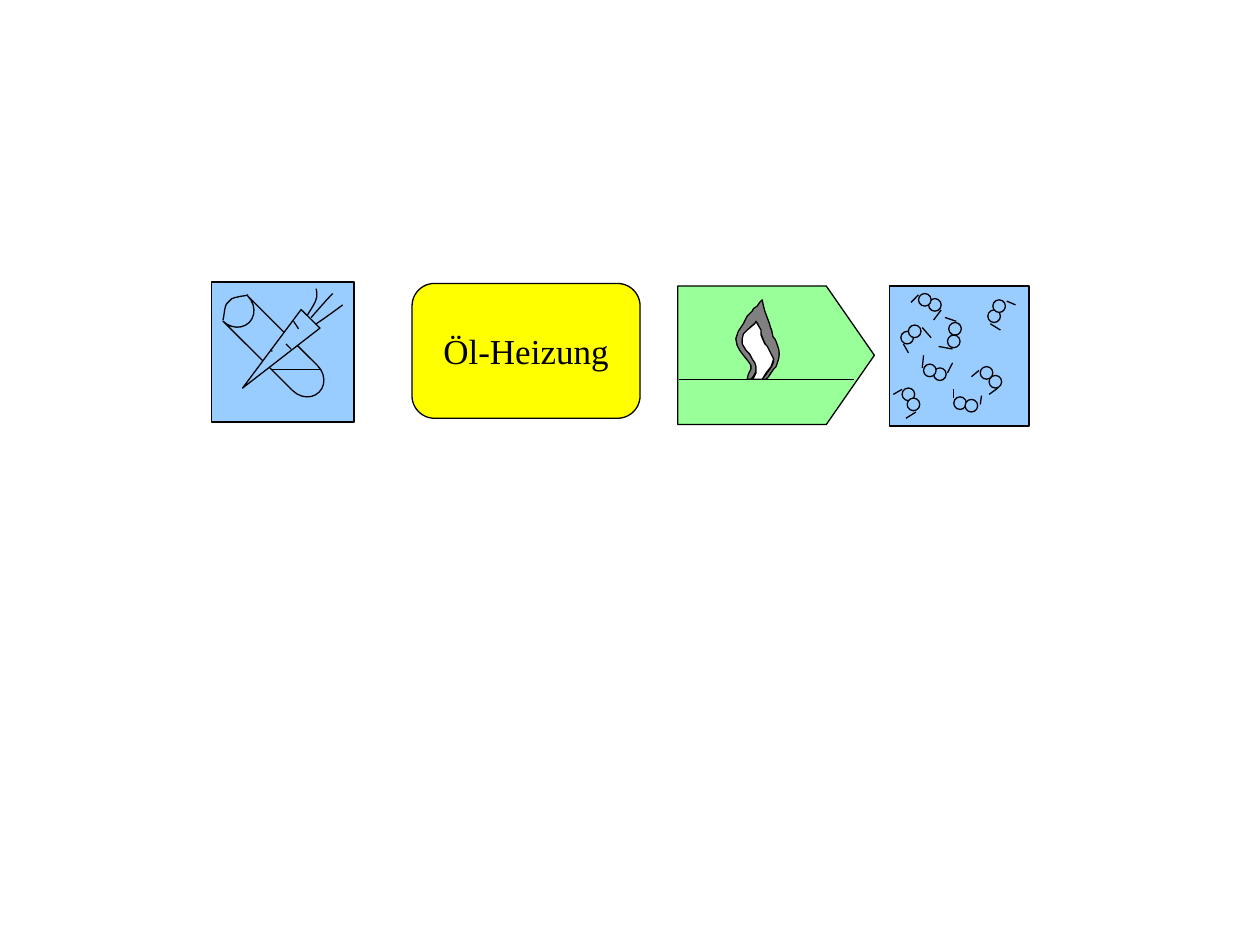
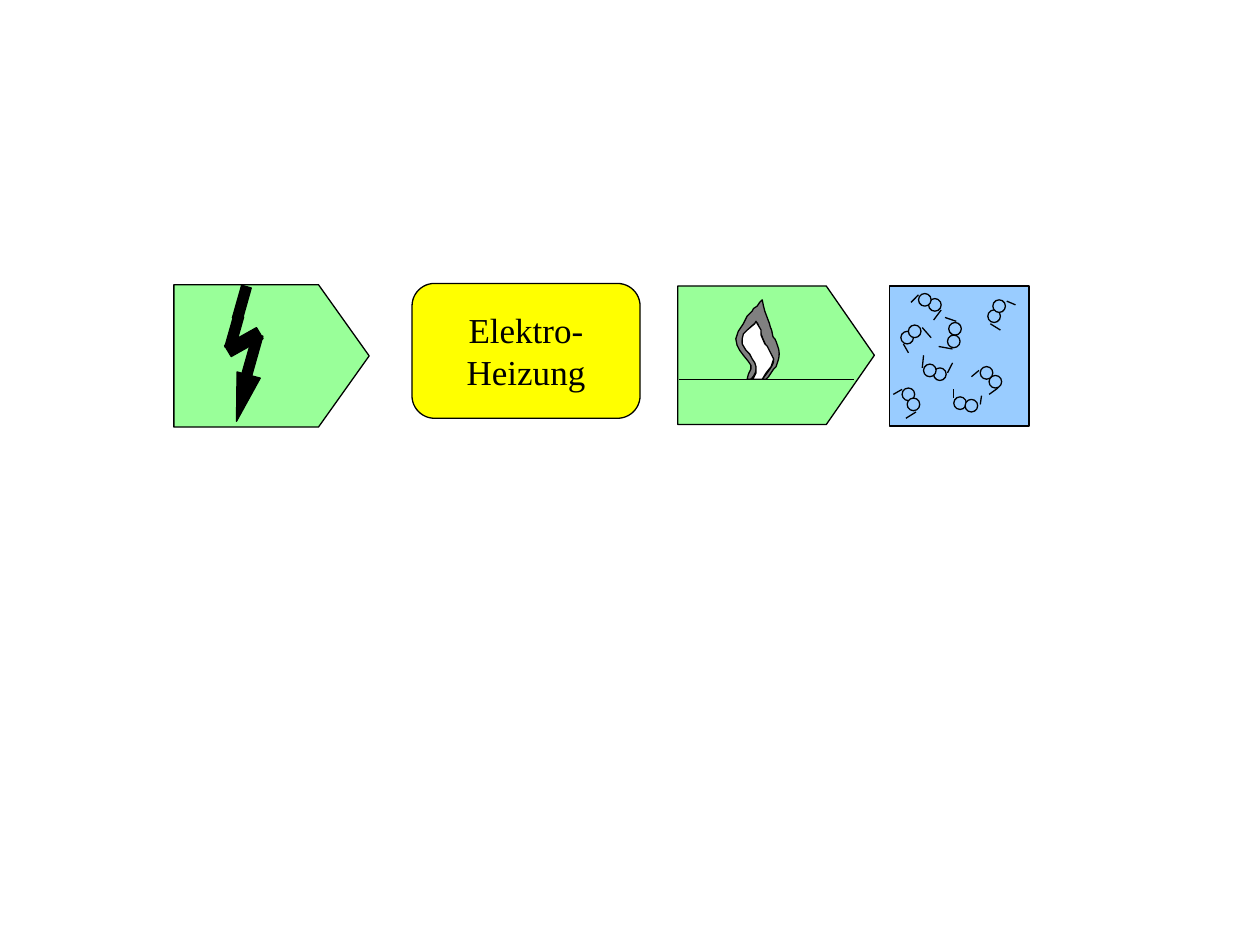
from lxml import etree
from pptx import Presentation
from pptx.dml.color import RGBColor
from pptx.enum.shapes import MSO_CONNECTOR, MSO_SHAPE
from pptx.enum.text import MSO_ANCHOR, PP_ALIGN
from pptx.oxml.ns import qn
from pptx.util import Inches, Pt

BLACK = RGBColor(0x00, 0x00, 0x00)
WHITE = RGBColor(0xFF, 0xFF, 0xFF)
GREY = RGBColor(0x80, 0x80, 0x80)
BLUE = RGBColor(0x99, 0xCC, 0xFF)
GREEN = RGBColor(0x99, 0xFF, 0x99)
YELLOW = RGBColor(0xFF, 0xFF, 0x00)

THIN, FRAME = 0.75, 1
CURVE_STEPS = 8
LABEL_FONT = {"name": "Times New Roman", "size": Pt(20)}
LABEL_FRAME = {"word_wrap": False, "vertical_anchor": MSO_ANCHOR.MIDDLE}

CONVERTER_AT = (3.27, 2.25, 1.81, 1.07)

FUEL_FRAME = (1.68, 2.24, 1.13, 1.11)
LOG_AT, LOG_TURN = (1.73, 2.64, 0.94, 0.28), 224.9
LOG_END = [
    (1.97, 2.34), (1.95, 2.35, 1.9, 2.35, 1.88, 2.36),
    (1.86, 2.36, 1.85, 2.37, 1.84, 2.37), (1.8, 2.41),
    (1.78, 2.44, 1.78, 2.51, 1.77, 2.54),
]
CARROT_AT, CARROT_TURN = (2.09, 2.42, 0.21, 0.77), 224.5
CARROT_LEAVES = [
    [(2.44, 2.5), (2.47, 2.45, 2.5, 2.41, 2.51, 2.37), (2.52, 2.34, 2.51, 2.3, 2.51, 2.29)],
    [(2.47, 2.52), (2.54, 2.44, 2.61, 2.36, 2.64, 2.33)],
    [(2.51, 2.57), (2.6, 2.51, 2.68, 2.45, 2.72, 2.42)],
]
FUEL_STROKES = [
    (2.33, 2.55, 2.37, 2.61), (2.27, 2.73, 2.31, 2.77),
    (2.15, 2.77, 2.16, 2.79), (2.16, 2.93, 2.54, 2.93),
]

HEAT_ARROW, HEAT_POINT = (5.38, 2.27, 1.56, 1.1), 0.347
BURNER = (5.39, 3.01, 6.78, 3.01)
FLAME = [
    (6.05, 2.38), (6.06, 2.43), (6.07, 2.47), (6.1, 2.55),
    (6.11, 2.57, 6.11, 2.59, 6.12, 2.61), (6.13, 2.63, 6.13, 2.67, 6.14, 2.68),
    (6.15, 2.69), (6.16, 2.71), (6.17, 2.74), (6.18, 2.77),
    (6.19, 2.82, 6.18, 2.85, 6.17, 2.88), (6.16, 2.91), (6.14, 2.93), (6.1, 2.99),
    (6.08, 3.01), (6.01, 3.01), (5.93, 3.01), (5.94, 2.97), (5.96, 2.93),
    (5.96, 2.9), (5.94, 2.87), (5.9, 2.82), (5.87, 2.78), (5.85, 2.74),
    (5.84, 2.69), (5.86, 2.63), (5.9, 2.57), (5.93, 2.51), (5.95, 2.49),
    (5.97, 2.47), (5.98, 2.45), (6.01, 2.43), (6.03, 2.4),
]
FLAME_EDGES = [
    [(6, 2.56), (5.95, 2.6, 5.9, 2.65, 5.89, 2.71), (5.89, 2.76, 5.99, 2.84, 6, 2.89),
     (6.01, 2.94, 5.99, 2.98, 5.96, 3.01)],
    [(6.01, 2.56), (6.02, 2.58, 6.05, 2.69, 6.07, 2.72), (6.08, 2.76, 6.09, 2.75, 6.1, 2.78),
     (6.11, 2.8, 6.14, 2.83, 6.14, 2.87), (6.13, 2.91, 6.09, 2.96, 6.05, 3.01)],
]
FLAME_CORE = [
    (6.05, 3.01), (6.08, 2.96), (6.12, 2.91), (6.14, 2.85), (6.13, 2.83),
    (6.11, 2.79), (6.09, 2.75), (6.07, 2.73), (6.04, 2.66), (6.04, 2.62),
    (6.01, 2.57), (6, 2.55), (5.99, 2.57), (5.93, 2.62), (5.9, 2.65),
    (5.89, 2.69), (5.89, 2.73), (5.92, 2.78), (5.95, 2.81), (5.97, 2.85),
    (5.99, 2.88), (6, 2.91), (6, 2.96), (5.99, 2.98), (5.98, 3), (5.96, 3.01),
]

AIR_FRAME = (7.06, 2.27, 1.11, 1.11)
ATOM_SIZE = 0.1
ATOMS = [
    (7.53, 2.56), (7.52, 2.66), (7.41, 2.92), (7.85, 2.98),
    (7.15, 2.63), (7.57, 3.15), (7.33, 2.89), (7.21, 2.58),
    (7.84, 2.46), (7.88, 2.38), (7.78, 2.91), (7.66, 3.17),
    (7.37, 2.37), (7.29, 2.33), (7.16, 3.08), (7.2, 3.16),
]
MOTION_MARKS = [
    (7.77, 2.94, 7.71, 2.99), (7.92, 3.08, 7.85, 3.13),
    (7.57, 3.16, 7.57, 3.09), (7.78, 3.21, 7.79, 3.14),
    (7.27, 3.27, 7.19, 3.32), (7.16, 3.09, 7.09, 3.13),
    (7.52, 2.96, 7.56, 2.88), (7.32, 2.92, 7.33, 2.82),
    (7.56, 2.77, 7.45, 2.75), (7.59, 2.55, 7.5, 2.52),
    (7.86, 2.57, 7.94, 2.62), (7.99, 2.39, 8.06, 2.42),
    (7.17, 2.73, 7.21, 2.8), (7.32, 2.6, 7.39, 2.68),
    (7.29, 2.34, 7.23, 2.4), (7.47, 2.46, 7.41, 2.54),
]

POWER_ARROW, POWER_POINT = (1.38, 2.26, 1.55, 1.13), 0.356
BOLT_PARTS = [
    (MSO_SHAPE.ISOSCELES_TRIANGLE, (1.83, 2.97, 0.19, 0.38), 194.8),
    (MSO_SHAPE.RECTANGLE, (1.96, 2.65, 0.08, 0.36), 15.8),
    (MSO_SHAPE.PARALLELOGRAM, (1.88, 2.57, 0.11, 0.29), 239.1),
    (MSO_SHAPE.RECTANGLE, (1.82, 2.5, 0.08, 0.27), 15.8),
    (MSO_SHAPE.RECTANGLE, (1.88, 2.27, 0.08, 0.27), 15.8),
]
BOLT_SKEW = 0.07


def apply(target, values):
    for name, value in values.items():
        setattr(target, name, value)


def paint(shape, fill, width=THIN):
    shape.shadow.inherit = False
    if fill is None:
        shape.fill.background()
    else:
        shape.fill.solid()
        shape.fill.fore_color.rgb = fill
    shape.line.color.rgb = BLACK
    shape.line.width = Pt(width)
    return shape


def add_preset(shapes, preset, at, fill, width=THIN, turn=0, adjust=None):
    shape = paint(shapes.add_shape(preset, *map(Inches, at)), fill, width)
    shape.rotation = turn
    if adjust is not None:
        shape.adjustments[0] = adjust
    return shape


def add_stroke(shapes, ends):
    stroke = shapes.add_connector(MSO_CONNECTOR.STRAIGHT, *map(Inches, ends))
    stroke.line.color.rgb = BLACK
    stroke.line.width = Pt(THIN)
    etree.SubElement(stroke._element.spPr, qn("a:effectLst"))


def trace(outline):
    points = [outline[0]]
    for step in outline[1:]:
        if len(step) == 2:
            points.append(step)
            continue
        controls = [points[-1], step[:2], step[2:4], step[4:]]
        for index in range(1, CURVE_STEPS + 1):
            t = index / CURVE_STEPS
            weights = ((1 - t) ** 3, 3 * t * (1 - t) ** 2, 3 * t * t * (1 - t), t ** 3)
            points.append(tuple(
                sum(weight * control[axis] for weight, control in zip(weights, controls))
                for axis in (0, 1)
            ))
    return [(Inches(x), Inches(y)) for x, y in points]


def add_outline(shapes, outline, fill, close=False):
    start, *rest = trace(outline)
    builder = shapes.build_freeform(*start)
    builder.add_line_segments(rest, close=close)
    return paint(builder.convert_to_shape(), fill)


def draw_fuel(page):
    shapes = page.shapes.add_group_shape().shapes
    add_preset(shapes, MSO_SHAPE.RECTANGLE, FUEL_FRAME, BLUE, FRAME)
    add_preset(shapes, MSO_SHAPE.FLOWCHART_STORED_DATA, LOG_AT, BLUE, turn=LOG_TURN)
    add_outline(shapes, LOG_END, BLUE)
    add_preset(shapes, MSO_SHAPE.ISOSCELES_TRIANGLE, CARROT_AT, BLUE, turn=CARROT_TURN)
    for leaf in CARROT_LEAVES:
        add_outline(shapes, leaf, BLUE)
    for ends in FUEL_STROKES:
        add_stroke(shapes, ends)


def draw_heat(page):
    shapes = page.shapes.add_group_shape().shapes
    add_preset(shapes, MSO_SHAPE.PENTAGON, HEAT_ARROW, GREEN, adjust=HEAT_POINT)
    add_outline(shapes, FLAME, GREY, close=True)
    add_stroke(shapes, BURNER)
    for edge in FLAME_EDGES:
        add_outline(shapes, edge, None)
    add_outline(shapes, FLAME_CORE, WHITE, close=True)


def draw_converter(page, lines):
    box = add_preset(page.shapes, MSO_SHAPE.ROUNDED_RECTANGLE, CONVERTER_AT, YELLOW, adjust=0.167)
    frame = box.text_frame
    apply(frame, LABEL_FRAME)
    for index, line in enumerate(lines):
        para = frame.add_paragraph() if index else frame.paragraphs[0]
        para.alignment = PP_ALIGN.CENTER
        span = para.add_run()
        span.text = line
        apply(span.font, LABEL_FONT)
        span.font.color.rgb = BLACK


def draw_air(page):
    shapes = page.shapes.add_group_shape().shapes
    add_preset(shapes, MSO_SHAPE.RECTANGLE, AIR_FRAME, BLUE, FRAME)
    for left, top in ATOMS:
        add_preset(shapes, MSO_SHAPE.OVAL, (left, top, ATOM_SIZE, ATOM_SIZE), BLUE)
    for ends in MOTION_MARKS:
        add_stroke(shapes, ends)


def draw_power(page):
    shapes = page.shapes.add_group_shape().shapes
    add_preset(shapes, MSO_SHAPE.PENTAGON, POWER_ARROW, GREEN, adjust=POWER_POINT)
    for preset, at, turn in BOLT_PARTS:
        skew = BOLT_SKEW if preset == MSO_SHAPE.PARALLELOGRAM else None
        add_preset(shapes, preset, at, BLACK, turn=turn, adjust=skew)


HEATINGS = [
    (draw_fuel, ["Öl-Heizung"]),
    (draw_power, ["Elektro-", "Heizung"]),
]


def main():
    deck = Presentation()
    deck.slide_width, deck.slide_height = Inches(10), Inches(7.5)
    for draw_source, label in HEATINGS:
        page = deck.slides.add_slide(deck.slide_layouts[6])
        draw_source(page)
        draw_heat(page)
        draw_converter(page, label)
        draw_air(page)
    deck.save("out.pptx")


if __name__ == "__main__":
    main()
